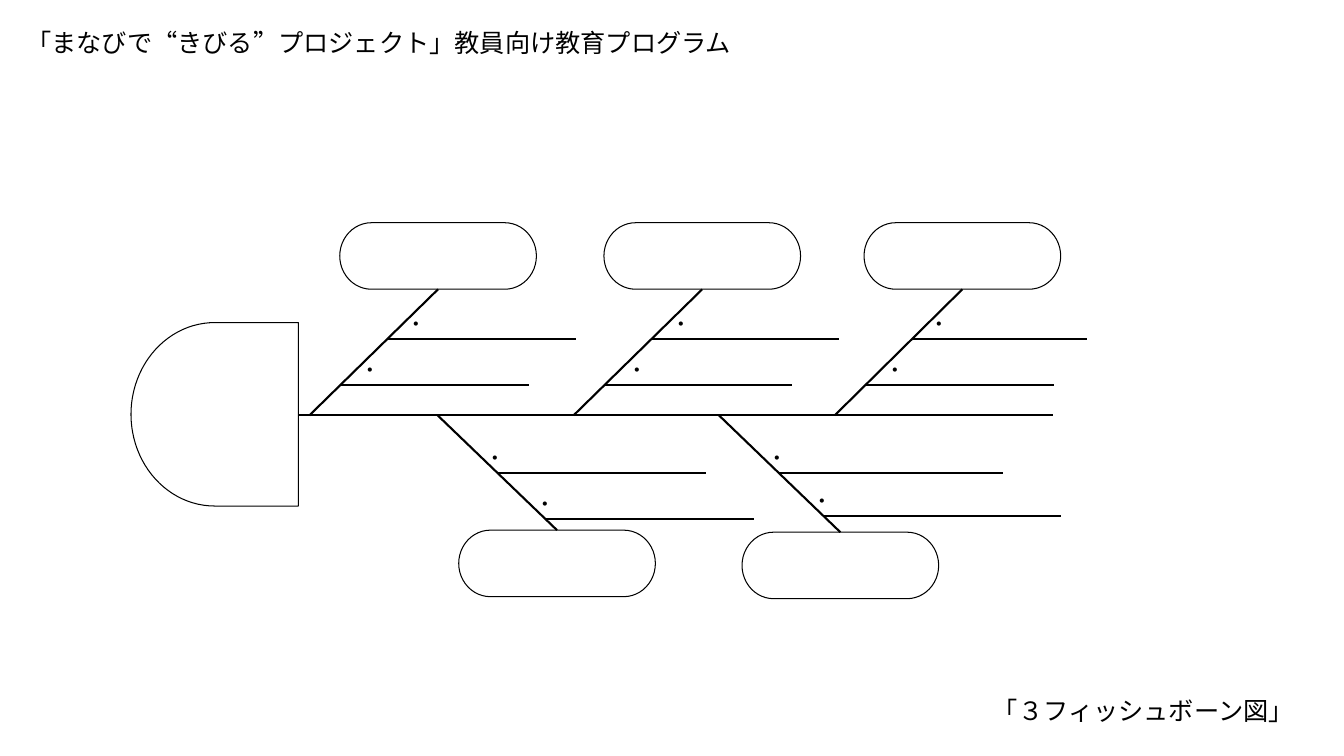
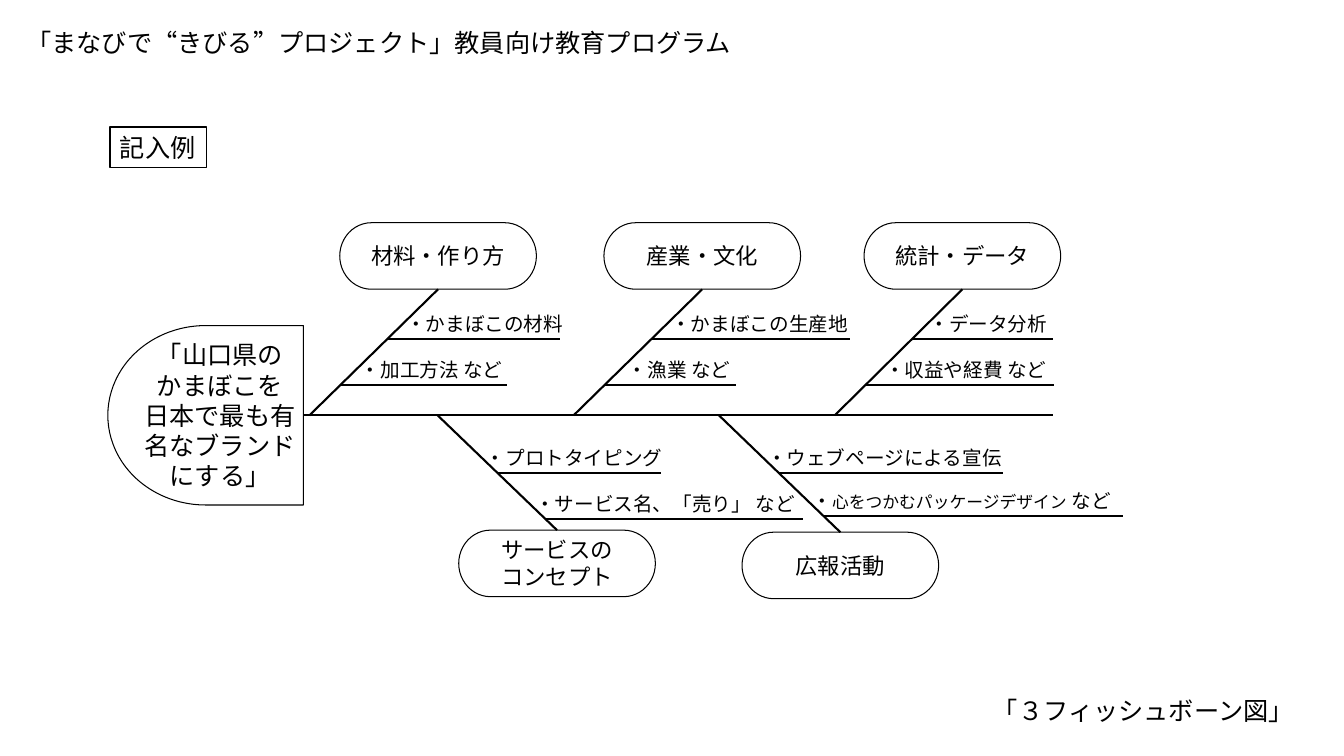
from dataclasses import dataclass

from lxml import etree
from pptx import Presentation
from pptx.dml.color import RGBColor
from pptx.enum.shapes import MSO_CONNECTOR, MSO_SHAPE
from pptx.enum.text import MSO_ANCHOR, MSO_AUTO_SIZE, PP_ALIGN
from pptx.oxml.ns import qn
from pptx.util import Inches, Pt


@dataclass(frozen=True)
class Theme:
    ink: RGBColor = RGBColor(0, 0, 0)
    paper: RGBColor = RGBColor(255, 255, 255)
    font: str = "Noto Sans CJK JP"
    shape_font: str = "Arial"
    heading: int = 18
    pill: int = 16
    label: int = 14
    small: int = 12
    bone: float = 1.5
    frame: float = 1
    outline: float = 0.75


T = Theme()
LINE = MSO_CONNECTOR.STRAIGHT

# Texts and geometry, in inches
HEADER = "「まなびで“きびる”プロジェクト」教員向け教育プログラム"
FOOTER = "「３フィッシュボーン図」"
GOAL = "「山口県の\nかまぼこを\n日本で最も有名なブランドにする」"
SPINE_Y, SPINE_END = 4.12, 10.44
PILL_W, PILL_H = 1.95, 0.66
LABEL_H = 0.3

# Bone: pill left, pill top, root on the spine, pill text, twigs
# Twig: y, label left, label width, (blank end, example end), label runs
BONES = [
    (3.37, 2.21, 3.07, "材料・作り方", [
        (3.36, 3.93, 1.56, (5.71, 5.55), [("かまぼこの材料", T.label)]),
        (3.82, 3.48, 1.76, (5.25, 5.03), [("加工方法 など", T.label)])]),
    (5.99, 2.21, 5.69, "産業・文化", [
        (3.36, 6.56, 1.76, (8.32, 8.43), [("かまぼこの生産地", T.label)]),
        (3.82, 6.13, 1.37, (7.86, 7.3), [("漁業 など", T.label)])]),
    (8.57, 2.21, 8.28, "統計・データ", [
        (3.36, 9.12, 1.33, (10.78, 10.44), [("データ分析", T.label)]),
        (3.82, 8.68, 1.95, (10.45, 10.45), [("収益や経費 など", T.label)])]),
    (4.55, 5.26, 4.34, "サービスの\nコンセプト", [
        (4.69, 4.72, 1.76, (7, 6.56), [("プロトタイピング", T.label)]),
        (5.15, 5.21, 2.44, (7.48, 7.96), [("サービス名、「売り」 など", T.label)])]),
    (7.36, 5.28, 7.13, "広報活動", [
        (4.69, 7.51, 2.34, (9.95, 9.95), [("ウェブページによる宣伝", T.label)]),
        (5.12, 7.96, 3.7, (10.52, 11.14),
         [("心をつかむパッケージデザイン", T.small), (" など", T.label)])]),
]

# Head: left, top, width, height; one for the blank sheet, one for the example
SHEETS = [(False, (1.3, 3.2, 1.66, 1.82)), (True, (1.07, 3.23, 1.94, 1.78))]


def write(sp, paragraphs, font=T.font, align=PP_ALIGN.LEFT, **frame):
    """Fill a shape with paragraphs, each a list of (text, size) runs."""
    tf = sp.text_frame
    settings = {"auto_size": MSO_AUTO_SIZE.NONE, "word_wrap": False,
                "vertical_anchor": MSO_ANCHOR.MIDDLE, **frame}
    for name, value in settings.items():
        setattr(tf, name, value)
    for i, runs in enumerate(paragraphs):
        p = tf.paragraphs[0] if i == 0 else tf.add_paragraph()
        p.alignment = align
        for text, size in runs:
            r = p.add_run()
            r.text = text
            r.font.size = Pt(size)
            r.font.color.rgb = T.ink
            r.font.name = font
            etree.SubElement(r.font._element, qn("a:ea"), typeface=font)


def draw(shapes, kind, box, weight=T.outline):
    """Add a connector (from x, y to x, y) or an outlined shape."""
    box = [Inches(v) for v in box]
    if kind is LINE:
        sp = shapes.add_connector(kind, *box)
    else:
        sp = shapes.add_shape(kind, *box)
        sp.shadow.inherit = False
        sp.fill.solid()
        sp.fill.fore_color.rgb = T.paper
    sp.line.color.rgb = T.ink
    sp.line.width = Pt(weight)
    if kind is LINE:
        etree.SubElement(sp._element.spPr, qn("a:effectLst"))
    return sp


prs = Presentation()
prs.slide_width, prs.slide_height = Inches(13.33), Inches(7.5)

for is_example, head_box in SHEETS:
    s = prs.slides.add_slide(prs.slide_layouts[5])
    shapes = s.shapes

    # Header and footer
    title = shapes.title
    for side, value in {"left": 0.16, "top": 0.22, "width": 7.43, "height": 0.4}.items():
        setattr(title, side, Inches(value))
    write(title, [[(HEADER, T.heading)]], word_wrap=True)
    footer = shapes.add_textbox(*[Inches(v) for v in (9.75, 6.85, 3.23, 0.4)])
    write(footer, [[(FOOTER, T.heading)]])

    # Head and spine
    head = draw(shapes, MSO_SHAPE.FLOWCHART_DELAY, head_box)
    head._element.spPr.find(qn("a:xfrm")).set("flipH", "1")
    draw(shapes, LINE, (head_box[0] + head_box[2], SPINE_Y, SPINE_END, SPINE_Y), T.bone)

    # Example texts in the head and the tag
    if is_example:
        write(head, [[(line, T.heading)] for line in GOAL.split("\n")], T.shape_font,
              PP_ALIGN.CENTER, word_wrap=True, margin_left=0, margin_right=0)
        tag = draw(shapes, MSO_SHAPE.RECTANGLE, (1.09, 1.26, 0.96, 0.4), T.frame)
        write(tag, [[("記入例", T.heading)]])

    # Bones, each with a pill at its tip
    for left, top, root, name, twigs in BONES:
        pill = draw(shapes, MSO_SHAPE.FLOWCHART_TERMINATOR, (left, top, PILL_W, PILL_H))
        if is_example:
            write(pill, [[(line, T.pill)] for line in name.split("\n")], T.shape_font,
                  PP_ALIGN.CENTER, word_wrap=True, margin_left=0, margin_right=0,
                  margin_top=0, margin_bottom=0)
        above = top < SPINE_Y
        tip_x, tip_y = left + PILL_W / 2, top + PILL_H if above else top
        bone = draw(shapes, LINE, (root, SPINE_Y, tip_x, tip_y), T.bone)
        bone.end_connect(pill, 2 if above else 0)

        # Twigs start on the bone, labels sit on them
        for y, label_left, label_w, ends, runs in twigs:
            start = root + (tip_x - root) * (y - SPINE_Y) / (tip_y - SPINE_Y)
            draw(shapes, LINE, (start, y, ends[is_example], y), T.bone)
            label = shapes.add_textbox(Inches(label_left), Inches(y - LABEL_H),
                                       Inches(label_w), Inches(LABEL_H))
            write(label, [[("・", T.label)] + (runs if is_example else [])])

prs.save("out.pptx")
